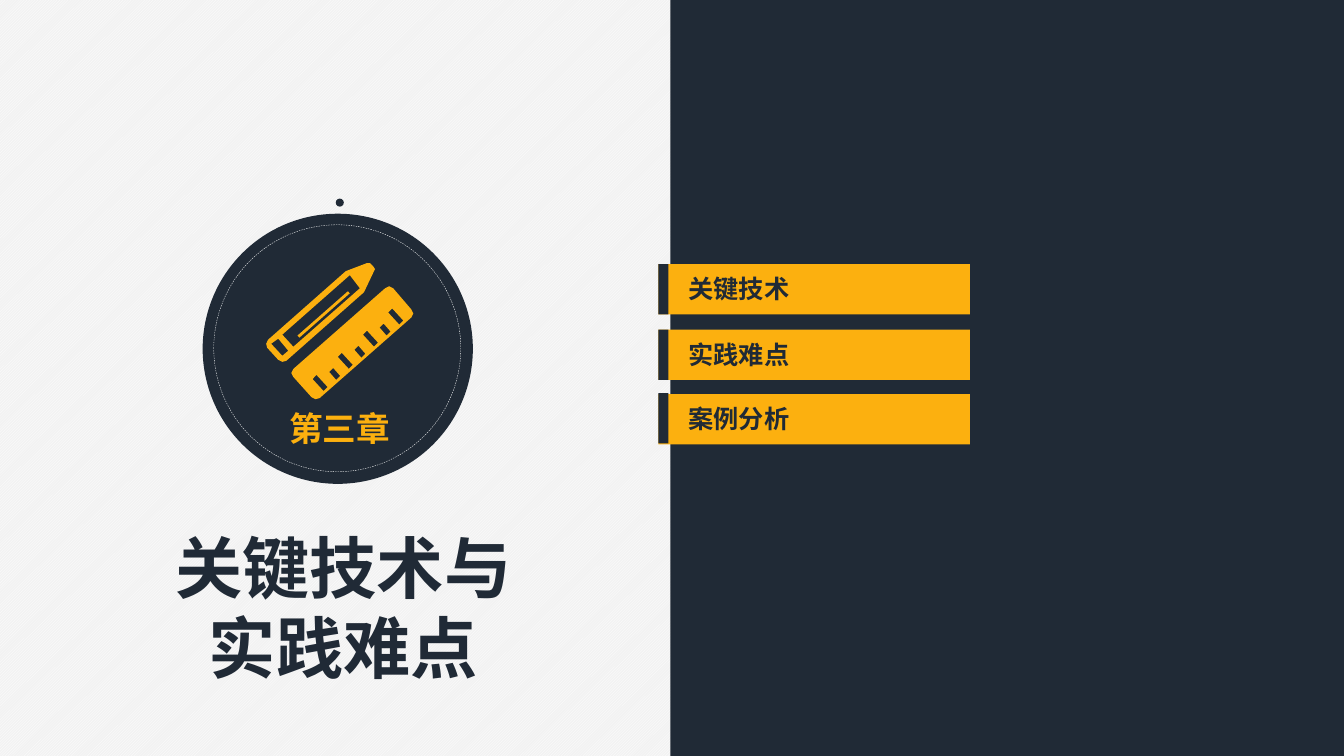
"""Build the chapter three divider slide with its tool badge and topic list."""
from dataclasses import dataclass

from lxml.etree import SubElement
from pptx import Presentation
from pptx.dml.color import RGBColor
from pptx.enum.dml import MSO_LINE, MSO_PATTERN
from pptx.enum.shapes import MSO_SHAPE
from pptx.enum.text import MSO_ANCHOR, PP_ALIGN
from pptx.oxml.ns import qn
from pptx.shapes.autoshape import Shape
from pptx.slide import Slide
from pptx.util import Inches, Pt

NAVY = "202A36"
AMBER = "FCB00F"
WHITE = "FFFFFF"
PALE = "F2F2F2"
FONT = "Noto Sans CJK SC"

Point = tuple[float, float]


@dataclass(frozen=True)
class Box:
    left: float
    top: float
    width: float
    height: float

    def lengths(self) -> tuple[int, int, int, int]:
        return Inches(self.left), Inches(self.top), Inches(self.width), Inches(self.height)


@dataclass(frozen=True)
class Topic:
    label: str
    bar_top: float
    tab_top: float
    text_top: float


TOPICS = [
    Topic("关键技术", 2.62, 2.62, 2.66),
    Topic("实践难点", 3.27, 3.27, 3.32),
    Topic("案例分析", 3.91, 3.9, 3.95),
]

PENCIL_CONTOURS: list[list[Point]] = [
    [(2.76, 3.57), (2.65, 3.45), (2.64, 3.41), (2.66, 3.37), (3.43, 2.69), (3.64, 2.61),
     (3.67, 2.61), (3.7, 2.64), (3.72, 2.67), (3.71, 2.69), (3.62, 2.88), (3.61, 2.9),
     (2.84, 3.58), (2.8, 3.59)],
    [(3.57, 2.86), (3.47, 2.73), (2.8, 3.32), (2.91, 3.44)],
    [(2.97, 3.35), (2.95, 3.33), (3.45, 2.89), (3.47, 2.91)],
    [(2.86, 3.48), (2.76, 3.36), (2.69, 3.41), (2.8, 3.53)],
]
RULER_OUTLINE: list[Point] = [
    (3.09, 3.94), (2.91, 3.74), (2.89, 3.7), (2.91, 3.66), (3.82, 2.86), (3.86, 2.84),
    (3.9, 2.86), (4.08, 3.07), (4.1, 3.11), (4.08, 3.15), (3.17, 3.95), (3.13, 3.96),
]
TICK_COUNT = 7


def color(value: str) -> RGBColor:
    return RGBColor.from_string(value)


def add_filled(slide: Slide, kind: MSO_SHAPE, box: Box, fill: str) -> Shape:
    shape = slide.shapes.add_shape(kind, *box.lengths())
    shape.shadow.inherit = False
    shape.fill.solid()
    shape.fill.fore_color.rgb = color(fill)
    shape.line.fill.background()
    return shape


def add_text(slide: Slide, lines: list[str], box: Box, size: float, fill: str,
             alignment: PP_ALIGN, wrap: bool = False,
             anchor: MSO_ANCHOR = MSO_ANCHOR.TOP) -> None:
    frame = slide.shapes.add_textbox(*box.lengths()).text_frame
    frame.word_wrap = wrap
    frame.vertical_anchor = anchor
    frame.text = "\n".join(lines)
    for paragraph in frame.paragraphs:
        paragraph.alignment = alignment
        paragraph.line_spacing = Pt(size * 1.2)
        paragraph.font.size = Pt(size)
        paragraph.font.bold = True
        paragraph.font.name = FONT
        paragraph.font.color.rgb = color(fill)
        for run in paragraph.runs:
            east_asian = SubElement(run._r.get_or_add_rPr(), qn("a:ea"))
            east_asian.set("typeface", FONT)


def ruler_tick(index: int) -> list[Point]:
    x, y = 3.25 + 0.125 * index, 3.84 - 0.11 * index
    depth_x, depth_y = (0.11, 0.12) if index % 2 == 0 else (0.07, 0.08)
    return [(x, y), (x - depth_x, y - depth_y),
            (x - depth_x - 0.04, y - depth_y + 0.04), (x - 0.04, y + 0.04)]


def add_pencil_and_ruler(slide: Slide) -> None:
    ticks = [ruler_tick(index) for index in range(TICK_COUNT)]
    contours = [
        [(Inches(x), Inches(y)) for x, y in contour]
        for contour in [*PENCIL_CONTOURS, RULER_OUTLINE, *ticks]
    ]
    builder = slide.shapes.build_freeform(*contours[0][0])
    builder.add_line_segments(contours[0][1:], close=True)
    for contour in contours[1:]:
        builder.move_to(*contour[0])
        builder.add_line_segments(contour[1:], close=True)
    icon = builder.convert_to_shape()
    icon.shadow.inherit = False
    icon.fill.solid()
    icon.fill.fore_color.rgb = color(AMBER)
    icon.line.fill.background()


def add_badge(slide: Slide) -> None:
    add_filled(slide, MSO_SHAPE.OVAL, Box(2.01, 2.12, 2.68, 2.68), NAVY)
    add_filled(slide, MSO_SHAPE.OVAL, Box(3.33, 1.97, 0.08, 0.08), NAVY)
    add_text(slide, ["第三章"], Box(2.07, 3.99, 2.6, 0.52), 24, AMBER,
             PP_ALIGN.CENTER, wrap=True, anchor=MSO_ANCHOR.MIDDLE)
    ring = add_filled(slide, MSO_SHAPE.OVAL, Box(2.12, 2.23, 2.45, 2.45), NAVY)
    ring.fill.background()
    ring.line.color.rgb = color(WHITE)
    ring.line.width = Pt(0.25)
    ring.line.dash_style = MSO_LINE.DASH
    add_pencil_and_ruler(slide)


def add_topic(slide: Slide, topic: Topic) -> None:
    add_filled(slide, MSO_SHAPE.RECTANGLE, Box(6.53, topic.bar_top, 3.09, 0.5), AMBER)
    add_filled(slide, MSO_SHAPE.RECTANGLE, Box(6.53, topic.tab_top, 0.1, 0.5), NAVY)
    add_text(slide, [topic.label], Box(6.73, topic.text_top, 1.21, 0.4), 18, NAVY,
             PP_ALIGN.LEFT)


def main() -> None:
    presentation = Presentation()
    presentation.slide_width = Inches(13.33)
    presentation.slide_height = Inches(7.5)
    slide = presentation.slides.add_slide(presentation.slide_layouts[6])
    background = slide.background.fill
    background.patterned()
    background.pattern = MSO_PATTERN.LIGHT_UPWARD_DIAGONAL
    background.fore_color.rgb = color(WHITE)
    background.back_color.rgb = color(PALE)

    add_filled(slide, MSO_SHAPE.RECTANGLE, Box(6.65, 0, 6.68, 7.5), NAVY)
    for topic in TOPICS:
        add_topic(slide, topic)
    add_badge(slide)
    add_text(slide, ["关键技术与", "实践难点"], Box(1.62, 5.17, 3.57, 1.72), 48, NAVY,
             PP_ALIGN.CENTER)
    presentation.save("out.pptx")


if __name__ == "__main__":
    main()
